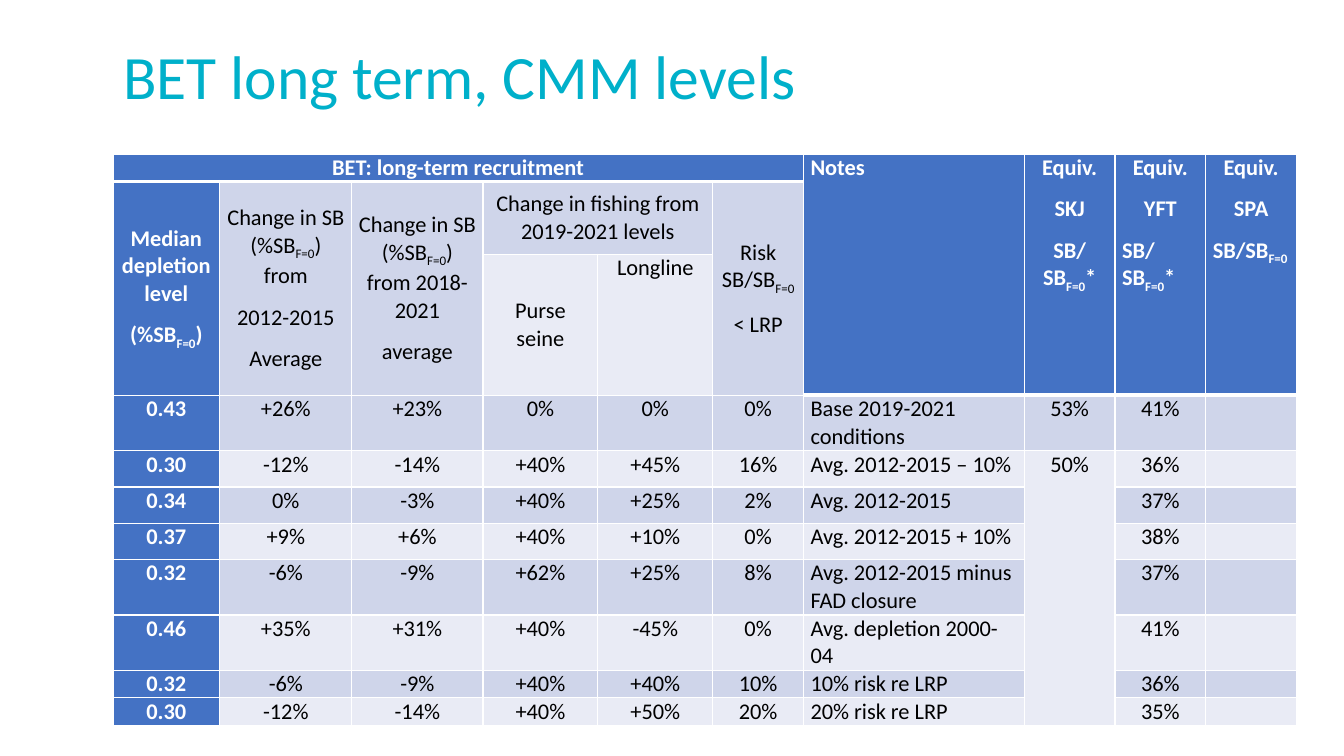
from dataclasses import dataclass

from lxml import etree
from pptx import Presentation
from pptx.dml.color import RGBColor
from pptx.enum import text
from pptx.oxml import ns
from pptx.util import Inches, Pt


@dataclass(frozen=True)
class Theme:
    font: str = "Calibri"
    title_size: int = 44
    cell_size: int = 16
    paragraph_gap: int = 10
    title: str = "00B0CA"
    header: str = "4472C4"
    band_dark: str = "CFD5EA"
    band_light: str = "E9EBF5"
    light: str = "FFFFFF"
    dark: str = "000000"


THEME = Theme()
SUBSCRIPT = "F=0"
NOTES_COLUMN = 6
FIRST_DATA_ROW = 3
LEFT, CENTER = text.PP_ALIGN.LEFT, text.PP_ALIGN.CENTER
TOP, MIDDLE = text.MSO_ANCHOR.TOP, text.MSO_ANCHOR.MIDDLE

COLUMN_WIDTHS = [1.06, 1.31, 1.3, 1.14, 1.14, 0.9, 2.19, 0.9, 0.9, 0.9]
ROW_HEIGHTS = [0.27, 0.72, 1.4, 0.55, 0.36, 0.36, 0.36, 0.55, 0.55, 0.27, 0.27]

MERGES = [
    (0, 0, 0, 5), (0, 6, 2, 6), (0, 7, 2, 7), (0, 8, 2, 8), (0, 9, 2, 9),
    (1, 0, 2, 0), (1, 1, 2, 1), (1, 2, 2, 2), (1, 3, 1, 4), (1, 5, 2, 5),
    (4, 7, 10, 7),
]

HEADERS = {
    (0, 0): ["BET: long-term recruitment"],
    (0, 6): ["Notes"],
    (0, 7): ["Equiv.", "SKJ", "SB/SBF=0*"],
    (0, 8): ["Equiv.", "YFT", "SB/SBF=0*"],
    (0, 9): ["Equiv.", "SPA", "SB/SBF=0"],
    (1, 0): ["Median depletion level", "(%SBF=0)"],
    (1, 1): ["Change in SB (%SBF=0) from", "2012-2015", "Average"],
    (1, 2): ["Change in SB (%SBF=0) from 2018-2021", "average"],
    (1, 3): ["Change in fishing from 2019-2021 levels"],
    (1, 5): ["Risk SB/SBF=0", "< LRP"],
    (2, 3): ["Purse seine"],
    (2, 4): ["Longline"],
}
LEFT_PARAGRAPHS = {(0, 8, 2), (0, 9, 2)}
TOP_HEADERS = {(2, 4)}

SCENARIOS = [
    ["0.43", "+26%", "+23%", "0%", "0%", "0%", "Base 2019-2021 conditions", "53%", "41%", ""],
    ["0.30", "-12%", "-14%", "+40%", "+45%", "16%", "Avg. 2012-2015 – 10%", "50%", "36%", ""],
    ["0.34", "0%", "-3%", "+40%", "+25%", "2%", "Avg. 2012-2015", "", "37%", ""],
    ["0.37", "+9%", "+6%", "+40%", "+10%", "0%", "Avg. 2012-2015 + 10%", "", "38%", ""],
    ["0.32", "-6%", "-9%", "+62%", "+25%", "8%", "Avg. 2012-2015 minus FAD closure", "", "37%", ""],
    ["0.46", "+35%", "+31%", "+40%", "-45%", "0%", "Avg. depletion 2000-04", "", "41%", ""],
    ["0.32", "-6%", "-9%", "+40%", "+40%", "10%", "10% risk re LRP", "", "36%", ""],
    ["0.30", "-12%", "-14%", "+40%", "+50%", "20%", "20% risk re LRP", "", "35%", ""],
]


def style_font(font, size, color, bold=False):
    font.name = THEME.font
    font.size = Pt(size)
    font.bold = bold
    font.color.rgb = RGBColor.from_string(color)


def add_title(slide, wording):
    title = slide.shapes.title
    title.left, title.top = Inches(1.12), Inches(0.41)
    title.width, title.height = Inches(11.5), Inches(1.1)
    title.text_frame.text = wording
    title.text_frame.vertical_anchor = TOP
    paragraph = title.text_frame.paragraphs[0]
    paragraph.alignment = LEFT
    paragraph.line_spacing = 0.9
    style_font(paragraph.font, THEME.title_size, THEME.title)


def add_runs(paragraph, wording):
    before, subscript, after = wording.partition(SUBSCRIPT)
    for part in filter(None, (before, subscript, after)):
        run = paragraph.add_run()
        run.text = part
        if part == SUBSCRIPT:
            run._r.get_or_add_rPr().set("baseline", "-25000")


def write_cell(cell, wordings, alignments, color, bold):
    frame = cell.text_frame
    for index, (wording, alignment) in enumerate(zip(wordings, alignments)):
        paragraph = frame.add_paragraph() if index else frame.paragraphs[0]
        add_runs(paragraph, wording)
        paragraph.alignment = alignment
        paragraph.space_after = Pt(THEME.paragraph_gap)
        style_font(paragraph.font, THEME.cell_size, color, bold)
        if not wording:
            end = etree.SubElement(paragraph._p, ns.qn("a:endParaRPr"))
            end.set("sz", str(THEME.cell_size * 100))


def set_borders(cell, bottom_width):
    properties = cell._tc.get_or_add_tcPr()
    widths = {"a:lnL": 1, "a:lnR": 1, "a:lnT": 1, "a:lnB": bottom_width}
    for index, (side, width) in enumerate(widths.items()):
        line = etree.Element(ns.qn(side), w=str(Pt(width)))
        fill = etree.SubElement(line, ns.qn("a:solidFill"))
        etree.SubElement(fill, ns.qn("a:srgbClr"), val=THEME.light)
        properties.insert(index, line)


def cell_color(row, column):
    if row == 0 or column == 0 or (row < FIRST_DATA_ROW and column >= NOTES_COLUMN):
        return THEME.header
    return THEME.band_dark if row % 2 else THEME.band_light


def format_cell(cell, row, column):
    is_header = row < FIRST_DATA_ROW
    if is_header:
        wordings = HEADERS.get((row, column), [""])
    else:
        wordings = [SCENARIOS[row - FIRST_DATA_ROW][column]]
    alignments = [
        LEFT if column == NOTES_COLUMN or (row, column, index) in LEFT_PARAGRAPHS else CENTER
        for index in range(len(wordings))
    ]
    background = cell_color(row, column)
    emphasized = background == THEME.header
    write_cell(cell, wordings, alignments, THEME.light if emphasized else THEME.dark, emphasized)
    cell.margin_left = cell.margin_right = Inches(0.07)
    cell.margin_top = cell.margin_bottom = 0
    centered = is_header and column < NOTES_COLUMN and (row, column) not in TOP_HEADERS
    cell.vertical_anchor = MIDDLE if centered else TOP
    cell.fill.solid()
    cell.fill.fore_color.rgb = RGBColor.from_string(background)
    under_header = row == 0 or (row == FIRST_DATA_ROW - 1 and column >= NOTES_COLUMN)
    set_borders(cell, 3 if under_header else 1)


def add_scenario_table(slide):
    frame = slide.shapes.add_table(
        len(ROW_HEIGHTS), len(COLUMN_WIDTHS), Inches(1.12), Inches(1.53),
        Inches(sum(COLUMN_WIDTHS)), Inches(sum(ROW_HEIGHTS)),
    )
    table = frame.table
    table.first_row = table.horz_banding = False
    for column, width in zip(table.columns, COLUMN_WIDTHS):
        column.width = Inches(width)
    for row, height in zip(table.rows, ROW_HEIGHTS):
        row.height = Inches(height)
    for row in range(len(ROW_HEIGHTS)):
        for column in range(len(COLUMN_WIDTHS)):
            format_cell(table.cell(row, column), row, column)
    for top, left, bottom, right in MERGES:
        table.cell(top, left).merge(table.cell(bottom, right))


def main():
    presentation = Presentation()
    presentation.slide_width, presentation.slide_height = Inches(13.33), Inches(7.5)
    slide = presentation.slides.add_slide(presentation.slide_layouts[5])
    add_title(slide, "BET long term, CMM levels")
    add_scenario_table(slide)
    presentation.save("out.pptx")


if __name__ == "__main__":
    main()
